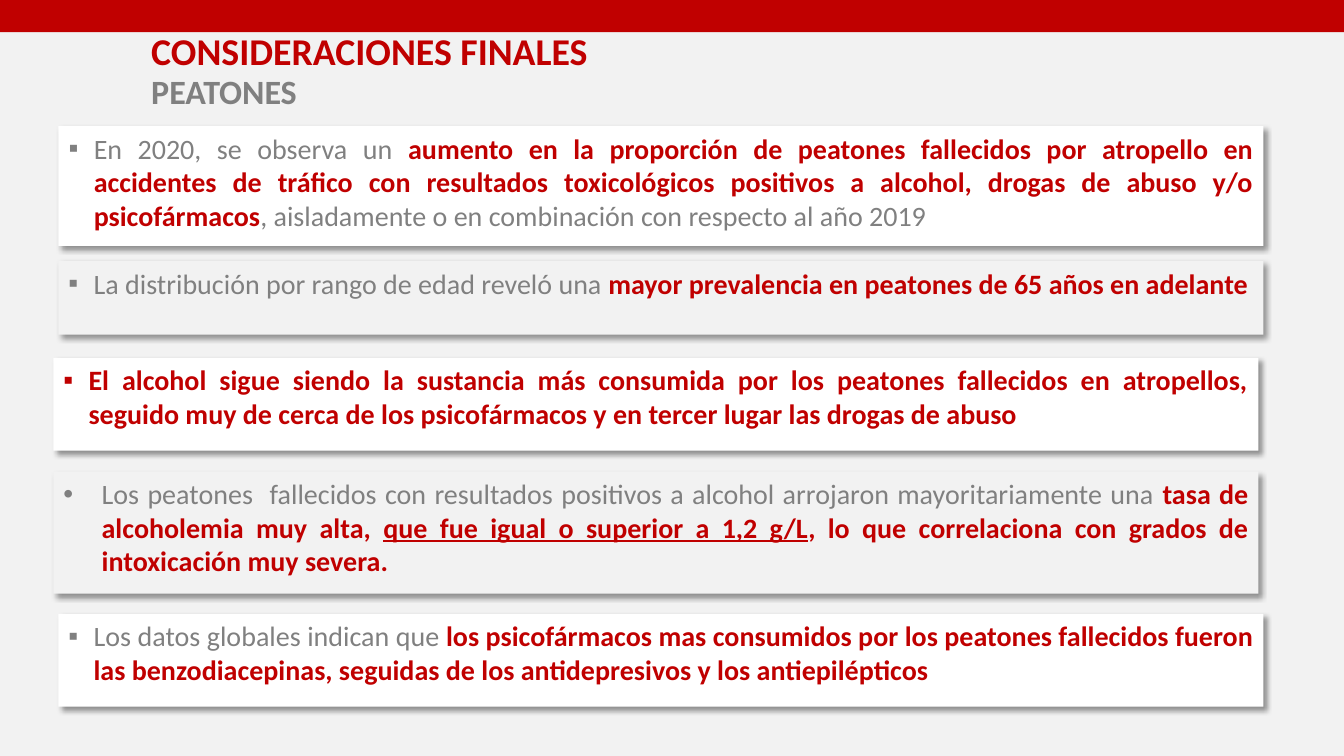
from dataclasses import dataclass

from lxml.etree import SubElement as Sub
from pptx import Presentation
from pptx.dml.color import RGBColor as Rgb
from pptx.enum.shapes import MSO_SHAPE as Geom
from pptx.enum.text import MSO_ANCHOR as Anchor
from pptx.enum.text import MSO_AUTO_SIZE as Fit
from pptx.enum.text import PP_ALIGN as Align
from pptx.oxml.ns import qn
from pptx.util import Inches, Pt

HEX = {"red": "C00000", "gray": "808080", "pale": "F2F2F2",
       "white": "FFFFFF", "black": "000000"}
FONT = "Calibri"


@dataclass
class Bit:
    """A piece of text: bold red unless plain."""
    text: str
    plain: bool = False
    line: bool = False


@dataclass
class Card:
    """A shadowed box holding one bullet."""
    left: float
    top: float
    height: float
    fill: str
    bits: list[Bit]
    mark: str = "▪"
    dent: float = 0.25


CARDS = [
    Card(0.58, 1.25, 1.19, "white", [
        Bit("En 2020, se observa un ", plain=True),
        Bit("aumento en la proporción de peatones fallecidos por atropello en "
            "accidentes de tráfico con resultados toxicológicos positivos a "
            "alcohol, drogas de abuso y/o psicofármacos"),
        Bit(", aisladamente o en combinación con respecto al año 2019", plain=True)]),
    Card(0.58, 2.59, 0.73, "pale", [
        Bit("La distribución por rango de edad reveló una ", plain=True),
        Bit("mayor prevalencia en peatones de 65 años en adelante")]),
    Card(0.53, 3.55, 0.92, "white", [
        Bit("El alcohol sigue siendo la sustancia más consumida por los peatones "
            "fallecidos en atropellos, seguido muy de cerca de los psicofármacos "
            "y en tercer lugar las drogas de abuso")]),
    Card(0.53, 4.68, 1.21, "pale", [
        Bit("Los peatones  fallecidos con resultados positivos a alcohol "
            "arrojaron mayoritariamente una ", plain=True),
        Bit("tasa de alcoholemia muy alta, "),
        Bit("que fue igual o superior a 1,2 g/L", line=True),
        Bit(", lo que correlaciona con grados de intoxicación muy severa.")],
        mark="•", dent=0.38),
    Card(0.58, 6.09, 0.92, "white", [
        Bit("Los datos globales indican que ", plain=True),
        Bit("los psicofármacos mas consumidos por los peatones fallecidos fueron "
            "las benzodiacepinas, seguidas de los antidepresivos y los "
            "antiepilépticos")]),
]


def tint(name: str) -> Rgb:
    """Return a named colour."""
    return Rgb.from_string(HEX[name])


def place(shape, left: float, top: float, width: float, height: float) -> None:
    """Move and size a shape in inches."""
    shape.left, shape.top = Inches(left), Inches(top)
    shape.width, shape.height = Inches(width), Inches(height)


def paint(shape, fill: str) -> None:
    """Give a shape a flat fill with no outline or shadow."""
    shape.fill.solid()
    shape.fill.fore_color.rgb = tint(fill)
    shape.line.fill.background()
    shape.shadow.inherit = False


def shade(shape) -> None:
    """Cast a soft shadow to the lower right."""
    host = shape._element.spPr.find(qn("a:effectLst"))
    cast = Sub(host, qn("a:outerShdw"), blurRad=str(Pt(4)), dist=str(Pt(3)),
               dir=str(45 * 60000), algn="tl", rotWithShape="0")
    tone = Sub(cast, qn("a:srgbClr"), val=HEX["black"])
    Sub(tone, qn("a:alpha"), val="40000")


def bullet(para, mark: str, dent: float) -> None:
    """Add a hanging bullet to a paragraph."""
    props = para._p.get_or_add_pPr()
    props.set("marL", str(Inches(dent)))
    props.set("indent", str(-Inches(dent)))
    Sub(props, qn("a:buFont"), typeface="Arial")
    Sub(props, qn("a:buChar"), char=mark)


def write(frame, card: Card) -> None:
    """Fill a card with its justified text."""
    frame.word_wrap = True
    frame.auto_size = Fit.NONE
    frame.vertical_anchor = Anchor.TOP
    para = frame.paragraphs[0]
    bullet(para, card.mark, card.dent)
    para.alignment = Align.JUSTIFY
    para.space_before = Pt(0)
    para.font.name, para.font.size = FONT, Pt(20)
    for bit in card.bits:
        run = para.add_run()
        run.text = bit.text
        run.font.bold = not bit.plain
        run.font.color.rgb = tint("gray" if bit.plain else "red")
        if bit.line:
            run.font.underline = True


def head(title) -> None:
    """Set the two-line title."""
    place(title, 1.4, 0.38, 10.53, 0.66)
    frame = title.text_frame
    frame.auto_size = Fit.NONE
    frame.vertical_anchor = Anchor.MIDDLE
    para = frame.paragraphs[0]
    para.alignment = Align.LEFT
    para.line_spacing = 0.95
    para.font.name, para.font.bold = FONT, True
    for text, size, tone in (("CONSIDERACIONES FINALES", 27, "red"),
                             ("PEATONES", 24.3, "gray")):
        if para.runs:
            para.add_line_break()
        run = para.add_run()
        run.text = text
        run.font.size = Pt(size)
        run.font.color.rgb = tint(tone)


def main() -> None:
    """Build and save the slide."""
    deck = Presentation()
    deck.slide_width, deck.slide_height = Inches(13.33), Inches(7.5)
    slide = deck.slides.add_slide(deck.slide_layouts[1])
    back = slide.background.fill
    back.solid()
    back.fore_color.rgb = tint("pale")
    head(slide.shapes.title)
    for spot, card in enumerate(CARDS):
        box = (slide.shapes.add_shape(Geom.RECTANGLE, 0, 0, 0, 0) if spot
               else slide.placeholders[1])
        place(box, card.left, card.top, 11.95, card.height)
        paint(box, card.fill)
        shade(box)
        write(box.text_frame, card)
    band = slide.shapes.add_shape(Geom.RECTANGLE, 0, 0, deck.slide_width, Inches(0.32))
    paint(band, "red")
    deck.save("out.pptx")


if __name__ == "__main__":
    main()
